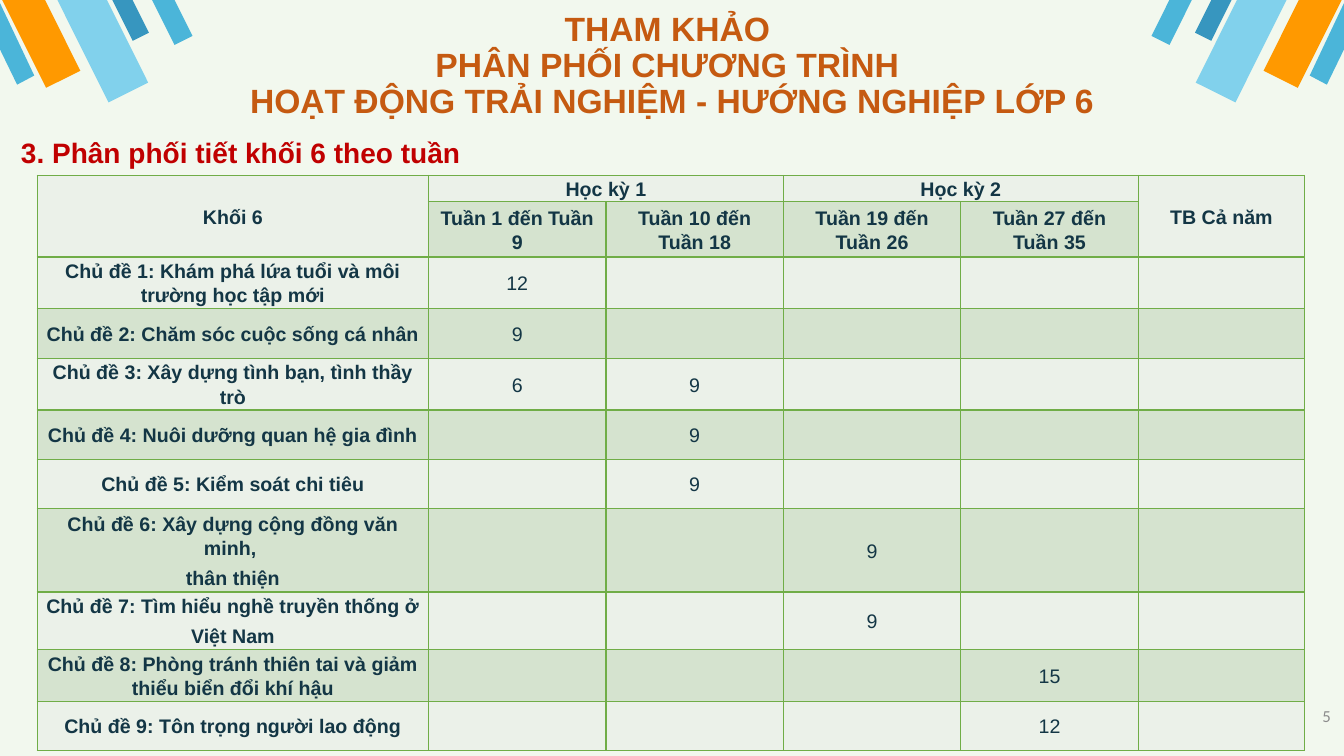
import pptx
import pptx.util
import pptx.dml.color
import pptx.enum.shapes
import pptx.enum.text
import pptx.oxml
import pptx.oxml.ns

Inches = pptx.util.Inches
Pt = pptx.util.Pt
ALIGN = pptx.enum.text.PP_ALIGN
ANCHOR = pptx.enum.text.MSO_ANCHOR

WIDTH, HEIGHT = 13.33, 7.5
COLORS = {
    "background": "F2F8EE", "title": "C55A11", "heading": "C00000",
    "text": "133645", "number": "8C8C8C", "border": "70AD47",
    "light": "EBF1E9", "dark": "D5E3CF",
    "blue": "3796BF", "orange": "FF9900", "pale": "81D1EC", "sky": "4BB5D9",
}


def rgb(name):
    return pptx.dml.color.RGBColor.from_string(COLORS[name])


class SlideBuilder:
    def __init__(self, slide):
        self.slide = slide
        self.font = "Arial"
        fill = slide.background.fill
        fill.solid()
        fill.fore_color.rgb = rgb("background")

    def paint(self, shape, color):
        shape.shadow.inherit = False
        shape.fill.solid()
        shape.fill.fore_color.rgb = rgb(color)
        shape.line.fill.background()

    def stripe(self, left, top, width, height, color, mirrored):
        x = WIDTH - left - width if mirrored else left
        shape = self.slide.shapes.add_shape(
            pptx.enum.shapes.MSO_SHAPE.FLOWCHART_MANUAL_INPUT,
            Inches(x), Inches(top), Inches(width), Inches(height))
        shape.rotation = 26.5 if mirrored else 333.5
        if not mirrored:
            shape._element.spPr.xfrm.set("flipH", "1")
        self.paint(shape, color)

    def outline(self, points, color, mirrored):
        corners = [(Inches(WIDTH - x if mirrored else x), Inches(y)) for x, y in points]
        builder = self.slide.shapes.build_freeform(*corners[0])
        builder.add_line_segments(corners[1:], close=True)
        self.paint(builder.convert_to_shape(), color)

    def run(self, paragraph, text, size, color, bold=False, font=None):
        run = paragraph.add_run()
        run.text = text
        run.font.name = font or self.font
        run.font.size = Pt(size)
        run.font.bold = bold
        run.font.color.rgb = rgb(color)

    def text(self, box, lines, size, color, align, inset=(0.1, 0.05), bold=False,
             anchor=ANCHOR.TOP, font=None):
        shape = self.slide.shapes.add_textbox(*(Inches(value) for value in box))
        frame = shape.text_frame
        frame.word_wrap = True
        frame.vertical_anchor = anchor
        frame.margin_left = frame.margin_right = Inches(inset[0])
        frame.margin_top = frame.margin_bottom = Inches(inset[1])
        paragraph = frame.paragraphs[0]
        paragraph.alignment = align
        for index, line in enumerate(lines):
            if index:
                paragraph.add_line_break()
            self.run(paragraph, line, size, color, bold, font)
        return paragraph

    def cell(self, cell, text, fill, bold):
        properties = cell._tc.get_or_add_tcPr()
        for side in ("lnL", "lnR", "lnT", "lnB"):
            properties.append(pptx.oxml.parse_xml(
                f'<a:{side} {pptx.oxml.ns.nsdecls("a")} w="12700"><a:solidFill>'
                f'<a:srgbClr val="{COLORS["border"]}"/></a:solidFill></a:{side}>'))
        cell.fill.solid()
        cell.fill.fore_color.rgb = rgb(fill)
        cell.vertical_anchor = ANCHOR.MIDDLE
        cell.margin_left = cell.margin_right = Inches(0.07)
        cell.margin_top = cell.margin_bottom = 0
        for index, line in enumerate(text.split("\n")):
            frame = cell.text_frame
            paragraph = frame.add_paragraph() if index else frame.paragraphs[0]
            paragraph.alignment = ALIGN.CENTER
            paragraph.line_spacing = 1.1
            paragraph.space_after = Pt(2)
            if index:
                paragraph.space_before = Pt(2)
            if line:
                self.run(paragraph, line, 14, "text", bold)
            else:
                paragraph.font.size = Pt(14)

    def table(self, left, top, widths, heights, rows, merges, header_rows):
        table = self.slide.shapes.add_table(
            len(heights), len(widths), Inches(left), Inches(top),
            Inches(sum(widths)), Inches(sum(heights))).table
        table.first_row = table.horz_banding = False
        for column, width in zip(table.columns, widths):
            column.width = Inches(width)
        for row, height in zip(table.rows, heights):
            row.height = Inches(height)
        for r, values in enumerate(rows):
            for c, value in enumerate(values):
                self.cell(table.cell(r, c), value, "dark" if r % 2 else "light",
                          r < header_rows or c == 0)
        for first, last in merges:
            table.cell(*first).merge(table.cell(*last))


STRIPES = [
    (1.2, -0.09, 0.18, 0.48, "blue"),
    (0.21, -0.18, 0.38, 1.02, "orange"),
    (0.79, -0.2, 0.44, 1.18, "pale"),
    (1.6, -0.11, 0.2, 0.54, "sky"),
]
EDGE_STRIPE = [(0.17, 0.84), (0.34, 0.75), (0, 0.03), (0, 0.49)]

# Each topic with its periods, keyed by half-semester column
TOPICS = [
    ("Chủ đề 1: Khám phá lứa tuổi và môi trường học tập mới", {1: "12"}),
    ("Chủ đề 2: Chăm sóc cuộc sống cá nhân", {1: "9"}),
    ("Chủ đề 3: Xây dựng tình bạn, tình thầy trò", {1: "6", 2: "9"}),
    ("Chủ đề 4: Nuôi dưỡng quan hệ gia đình", {2: "9"}),
    ("Chủ đề 5: Kiểm soát chi tiêu", {2: "9"}),
    ("Chủ đề 6: Xây dựng cộng đồng văn minh, \nthân thiện", {3: "9"}),
    ("Chủ đề 7: Tìm hiểu nghề truyền thống ở \nViệt Nam", {3: "9"}),
    ("Chủ đề 8: Phòng tránh thiên tai và giảm thiểu biển đổi khí hậu", {4: "15"}),
    ("Chủ đề 9: Tôn trọng người lao động", {4: "12"}),
]
HEADER = [
    ["Khối 6", "Học kỳ 1", "", "Học kỳ 2", "", "TB Cả năm"],
    ["", "Tuần 1 đến Tuần 9", "Tuần 10 đến Tuần 18",
     "Tuần 19 đến Tuần 26", "Tuần 27 đến Tuần 35", ""],
]
HEADER_MERGES = [((0, 0), (1, 0)), ((0, 1), (0, 2)), ((0, 3), (0, 4)), ((0, 5), (1, 5))]


def main():
    presentation = pptx.Presentation()
    presentation.slide_width = Inches(WIDTH)
    presentation.slide_height = Inches(HEIGHT)
    builder = SlideBuilder(presentation.slides.add_slide(presentation.slide_layouts[6]))

    # Corner stripes, left and mirrored right
    for mirrored in (False, True):
        for stripe in STRIPES:
            builder.stripe(*stripe, mirrored)
        builder.outline(EDGE_STRIPE, "sky", mirrored)

    # Title, page number and heading
    title = builder.text(
        (1.75, -0.22, 9.83, 1.52),
        ["THAM KHẢO ", "PHÂN PHỐI CHƯƠNG TRÌNH ",
         "HOẠT ĐỘNG TRẢI NGHIỆM - HƯỚNG NGHIỆP LỚP 6"],
        24, "title", ALIGN.CENTER, (0.1, 0.1), True, ANCHOR.BOTTOM)
    title.line_spacing = 0.9
    builder.text((12.53, 6.9, 0.8, 0.57), ["5"], 12, "number", ALIGN.RIGHT,
                 (0.13, 0.13), font="Calibri")
    heading = builder.text((0.11, 1.3, 12.24, 0.44), ["3. Phân phối tiết khối 6 theo tuần"],
                           20, "heading", ALIGN.LEFT, bold=True)
    heading.space_after = Pt(6)

    # Timetable
    topic_rows = [[name] + [periods.get(column, "") for column in range(1, 6)]
                  for name, periods in TOPICS]
    builder.table(0.37, 1.74, [3.88] + [1.76] * 4 + [1.65],
                  [0.26, 0.55] + [0.49] * 5 + [0.5] * 2 + [0.49] * 2,
                  HEADER + topic_rows, HEADER_MERGES, len(HEADER))

    presentation.save("out.pptx")


if __name__ == "__main__":
    main()
